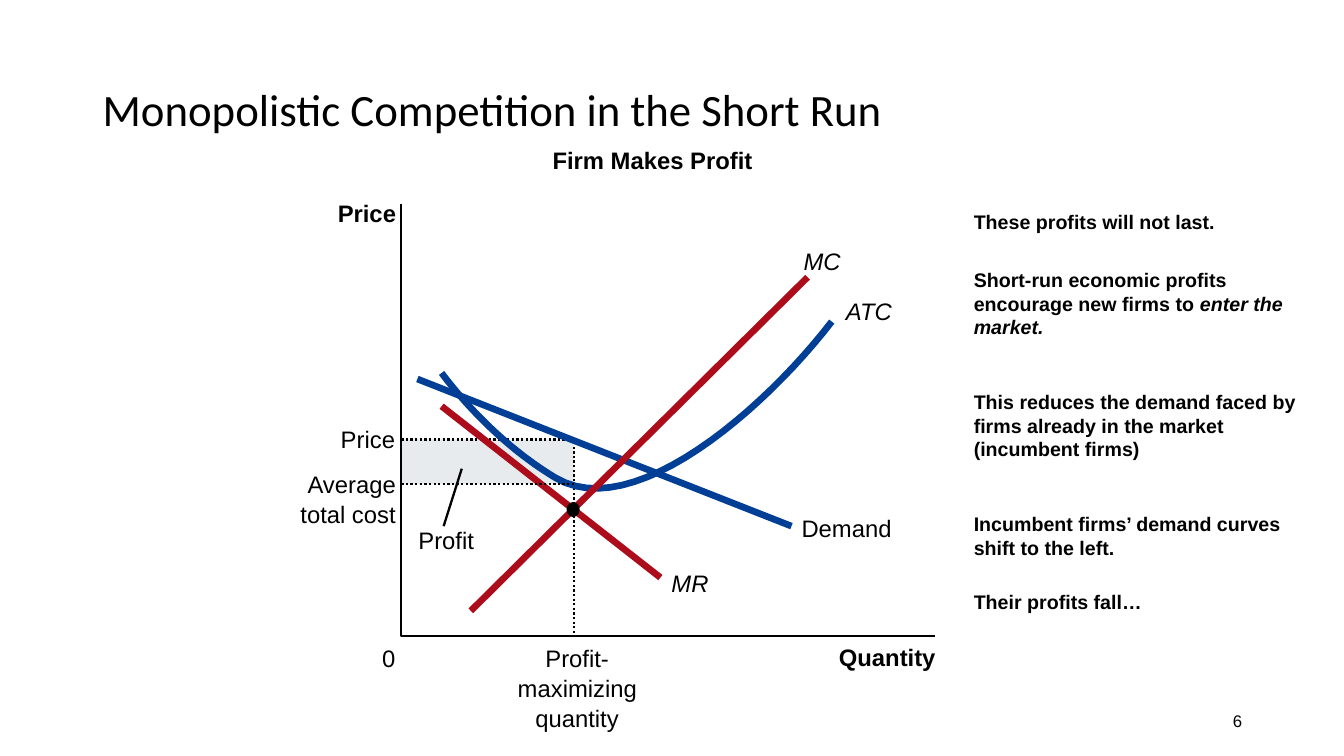
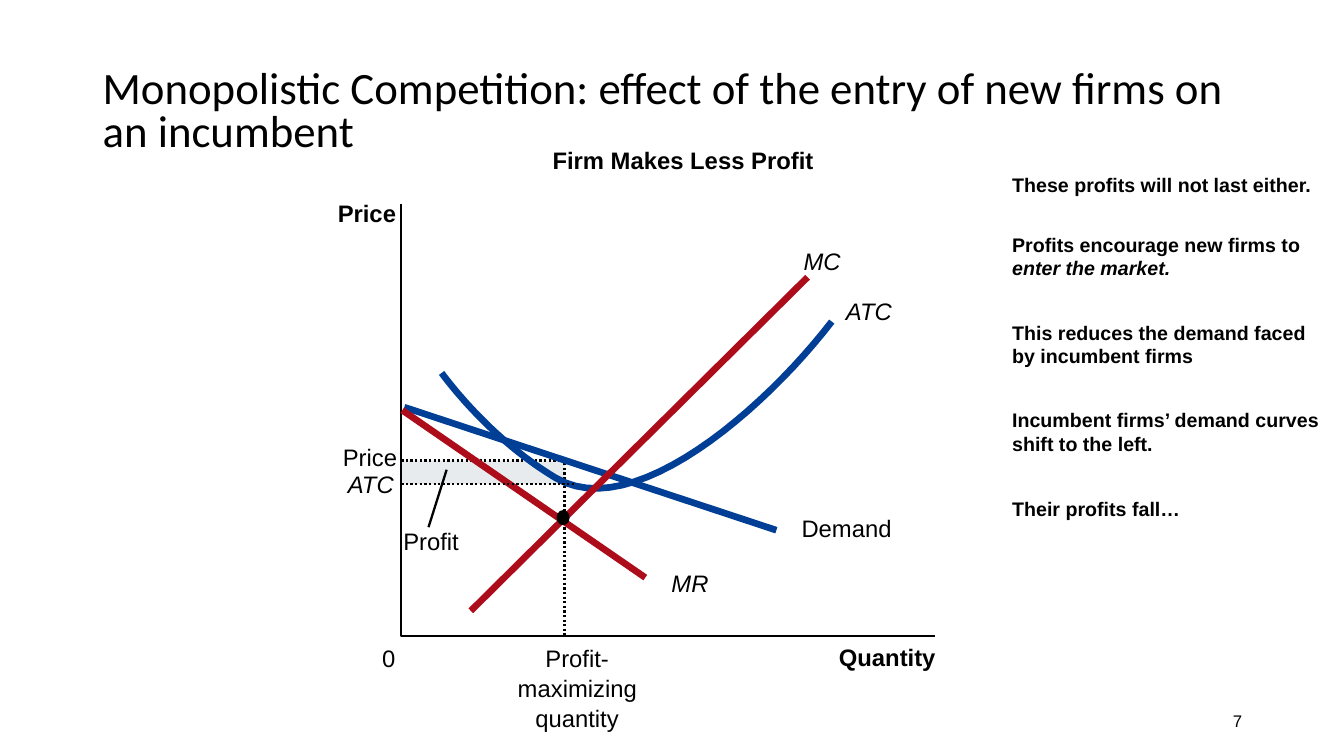
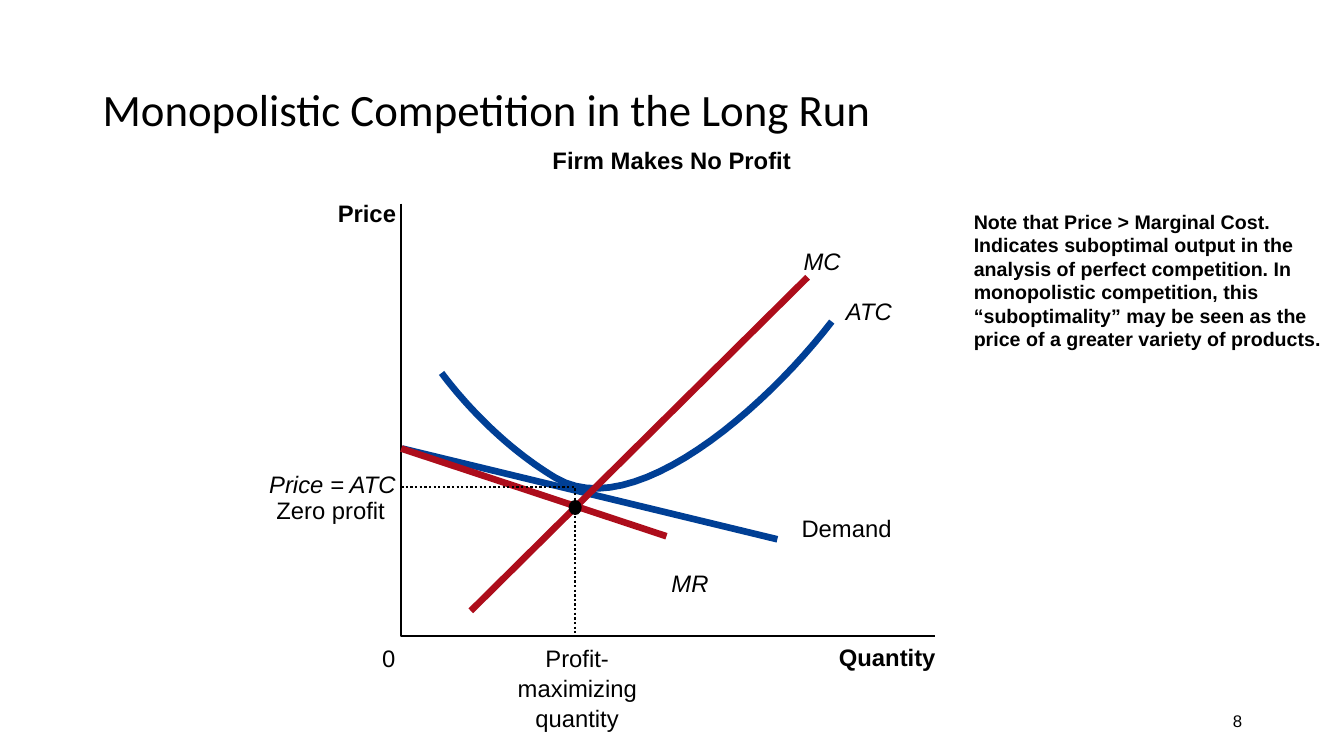
from lxml import etree
from pptx import Presentation
from pptx.dml.color import RGBColor
from pptx.enum.dml import MSO_LINE
from pptx.enum.shapes import MSO_CONNECTOR, MSO_SHAPE
from pptx.enum.text import MSO_ANCHOR, MSO_AUTO_SIZE, PP_ALIGN
from pptx.oxml.ns import qn
from pptx.util import Inches, Pt

COLORS = {
    "ink": "000000",
    "blue": "003F95",
    "red": "AD0D1B",
    "profit": "E7EBEE",
}
AXIS_X, AXIS_Y = 3.98, 6.31
AXIS_TOP, AXIS_RIGHT = 2.02, 9.27
THIN, THICK = 1.63, 4.75
LABEL_HEIGHT = 0.29
DOT_WIDTH, DOT_HEIGHT = 0.13, 0.15
ATC_START = (4.38, 3.7)
ATC_BEZIERS = [
    ((4.56, 3.94), (4.96, 4.41), (5.51, 4.74)),
    ((6.28, 5.2), (7.59, 4.05), (8.25, 3.19)),
]
CURVE_STEPS = 24


def rgb(name):
    return RGBColor.from_string(COLORS[name])


def add_text(slide, box, content, *, size=17, font="Arial", bold=False, italic=False,
             align=PP_ALIGN.LEFT, anchor=MSO_ANCHOR.TOP, spacing=None,
             wrap=True, grow=False, inset=True):
    """Content is a string, or a list of (text, italic) runs."""
    text_box = slide.shapes.add_textbox(*map(Inches, box))
    frame = text_box.text_frame
    frame.word_wrap = wrap
    frame.vertical_anchor = anchor
    frame.auto_size = MSO_AUTO_SIZE.SHAPE_TO_FIT_TEXT if grow else MSO_AUTO_SIZE.NONE
    if not inset:
        frame.margin_left = frame.margin_right = 0
        frame.margin_top = frame.margin_bottom = 0
    paragraph = frame.paragraphs[0]
    paragraph.alignment = align
    if spacing:
        paragraph.line_spacing = spacing
    runs = [(content, italic)] if isinstance(content, str) else content
    for words, slanted in runs:
        run = paragraph.add_run()
        run.text = words
        run.font.name = font
        run.font.size = Pt(size)
        run.font.bold = bold
        run.font.italic = slanted
        run.font.color.rgb = rgb("ink")


def add_label(slide, left, top, width, content, **style):
    add_text(slide, (left, top, width, LABEL_HEIGHT), content,
             wrap=False, grow=True, inset=False, **style)


def style_line(line, color, width, dotted=False):
    line.color.rgb = rgb(color)
    line.width = Pt(width)
    if dotted:
        line.dash_style = MSO_LINE.ROUND_DOT


def add_line(slide, start, end, color="ink", width=THIN, dotted=False):
    connector = slide.shapes.add_connector(
        MSO_CONNECTOR.STRAIGHT, *map(Inches, (*start, *end)))
    style_line(connector.line, color, width, dotted)
    etree.SubElement(connector.element.spPr, qn("a:effectLst"))


def add_path(slide, points, color="ink", width=THIN, dotted=False):
    corners = [(Inches(x), Inches(y)) for x, y in points]
    builder = slide.shapes.build_freeform(*corners[0])
    builder.add_line_segments(corners[1:], close=False)
    path = builder.convert_to_shape()
    path.shadow.inherit = False
    path.fill.background()
    style_line(path.line, color, width, dotted)


def add_solid(slide, kind, box, color):
    solid = slide.shapes.add_shape(kind, *map(Inches, box))
    solid.shadow.inherit = False
    solid.fill.solid()
    solid.fill.fore_color.rgb = rgb(color)
    solid.line.fill.background()


def bezier_point(corners, t):
    weights = ((1 - t) ** 3, 3 * t * (1 - t) ** 2, 3 * t ** 2 * (1 - t), t ** 3)
    return tuple(sum(w * c[axis] for w, c in zip(weights, corners)) for axis in (0, 1))


def atc_points():
    points = [ATC_START]
    for bezier in ATC_BEZIERS:
        corners = (points[-1], *bezier)
        points += [bezier_point(corners, step / CURVE_STEPS)
                   for step in range(1, CURVE_STEPS + 1)]
    return points


def start_slide(prs, number, title):
    slide = prs.slides.add_slide(prs.slide_layouts[6])
    add_text(slide, (0.92, 0.4, 11.5, 1.45), title, size=32, font="Calibri",
             anchor=MSO_ANCHOR.MIDDLE, spacing=0.8)
    add_text(slide, (9.42, 6.95, 3, 0.4), str(number), size=12,
             align=PP_ALIGN.RIGHT, anchor=MSO_ANCHOR.MIDDLE)
    return slide


def add_axes(slide, heading, heading_width):
    add_path(slide, [(AXIS_X, AXIS_TOP), (AXIS_X, AXIS_Y), (AXIS_RIGHT, AXIS_Y)])
    add_label(slide, 5.48, 1.45, heading_width, heading, bold=True)
    add_label(slide, 3.35, 1.97, 0.59, "Price", bold=True)
    add_label(slide, 8.32, 6.38, 0.97, "Quantity", bold=True)
    add_label(slide, 3.79, 6.39, 0.13, "0")
    caption = [("Profit-", 0.64), ("maximizing", 1.19), ("quantity", 0.84)]
    for row, (word, width) in enumerate(caption):
        add_label(slide, 5.73 - width / 2, 6.39 + 0.295 * row, width, word)


def add_profit_area(slide, quantity, price, cost):
    add_solid(slide, MSO_SHAPE.RECTANGLE,
              (AXIS_X, price, quantity - AXIS_X, cost - price), "profit")


def add_price_guide(slide, quantity, price):
    add_path(slide, [(AXIS_X, price), (quantity, price), (quantity, AXIS_Y)], dotted=True)


def add_cost_guide(slide, cost):
    add_line(slide, (AXIS_X, cost), (5.69, cost), dotted=True)


def add_curves(slide, demand, revenue):
    """Demand and marginal revenue move between slides; ATC and MC stay."""
    add_line(slide, *demand, "blue", THICK)
    add_line(slide, *revenue, "red", THICK)
    add_path(slide, atc_points(), "blue", THICK)
    add_line(slide, (8.01, 2.75), (4.67, 6.06), "red", THICK)
    add_label(slide, 7.95, 5.1, 0.9, "Demand")
    add_label(slide, 6.66, 5.64, 0.37, "MR", italic=True)
    add_label(slide, 8.39, 2.94, 0.46, "ATC", italic=True)
    add_label(slide, 7.97, 2.45, 0.37, "MC", italic=True)


def add_profit_pointer(slide, left, top):
    add_line(slide, (left + 0.25, top), (left + 0.43, top - 0.57))
    add_label(slide, left, top, 0.56, "Profit")


def add_optimum(slide, left, top):
    add_solid(slide, MSO_SHAPE.OVAL, (left, top, DOT_WIDTH, DOT_HEIGHT), "ink")


def add_notes(slide, left, width, notes):
    for top, height, content in notes:
        add_text(slide, (left, top, width, height), content, size=14, bold=True, grow=True)


def build_profit_slide(prs):
    slide = start_slide(prs, 6, "Monopolistic Competition in the Short Run")
    add_profit_area(slide, 5.69, 4.36, 4.8)
    add_axes(slide, "Firm Makes Profit", 2.08)
    add_price_guide(slide, 5.69, 4.36)
    add_curves(slide, ((4.14, 3.76), (7.85, 5.22)), ((4.38, 4.03), (6.55, 5.73)))
    add_cost_guide(slide, 4.8)
    add_label(slide, 3.38, 4.21, 0.54, "Price")
    add_label(slide, 3.05, 4.66, 0.89, "Average")
    add_label(slide, 2.98, 4.96, 0.96, "total cost")
    add_profit_pointer(slide, 4.15, 5.22)
    add_optimum(slide, 5.62, 4.98)
    add_notes(slide, 9.56, 3.66, [
        (2.03, 0.35, "These profits will not last."),
        (2.61, 0.81, [("Short-run economic profits encourage new firms to ", False),
                      ("enter the market.", True)]),
        (3.82, 0.81, "This reduces the demand faced by firms already in the market "
                     "(incumbent firms)"),
        (5.03, 0.57, "Incumbent firms’ demand curves shift to the left."),
        (5.8, 0.34, "Their profits fall…"),
    ])


def build_entry_slide(prs):
    slide = start_slide(prs, 7, "Monopolistic Competition: effect of the entry of "
                                "new firms on an incumbent")
    add_profit_area(slide, 5.6, 4.57, 4.8)
    add_axes(slide, "Firm Makes Less Profit", 2.69)
    add_price_guide(slide, 5.6, 4.57)
    add_curves(slide, ((4.01, 4.04), (7.7, 5.26)), ((3.99, 4.07), (6.4, 5.73)))
    add_cost_guide(slide, 4.8)
    add_label(slide, 3.4, 4.39, 0.54, "Price")
    add_label(slide, 3.45, 4.66, 0.46, "ATC", italic=True)
    add_profit_pointer(slide, 4, 5.23)
    add_optimum(slide, 5.52, 5.06)
    add_notes(slide, 9.94, 3.29, [
        (1.67, 0.34, "These profits will not last either."),
        (2.26, 0.57, [("Profits encourage new firms to ", False),
                      ("enter the market.", True)]),
        (3.13, 0.57, "This reduces the demand faced by incumbent firms"),
        (4, 0.57, "Incumbent firms’ demand curves shift to the left."),
        (4.88, 0.34, "Their profits fall…"),
    ])


def build_long_run_slide(prs):
    slide = start_slide(prs, 8, "Monopolistic Competition in the Long Run")
    add_axes(slide, "Firm Makes No Profit", 2.47)
    add_curves(slide, ((3.99, 4.45), (7.71, 5.35)), ((3.98, 4.45), (6.61, 5.32)))
    add_optimum(slide, 5.64, 4.96)
    add_price_guide(slide, 5.7, 4.83)
    add_label(slide, 2.67, 4.66, 1.27, "Price = ATC", italic=True)
    add_label(slide, 2.74, 4.92, 1.09, "Zero profit")
    add_notes(slide, 9.56, 3.66, [
        (2.03, 1.51, "Note that Price > Marginal Cost. Indicates suboptimal output in the "
                     "analysis of perfect competition. In monopolistic competition, this "
                     "“suboptimality” may be seen as the price of a greater variety of "
                     "products."),
    ])


def main():
    prs = Presentation()
    prs.slide_width, prs.slide_height = Inches(13.33), Inches(7.5)
    build_profit_slide(prs)
    build_entry_slide(prs)
    build_long_run_slide(prs)
    prs.save("out.pptx")


if __name__ == "__main__":
    main()
